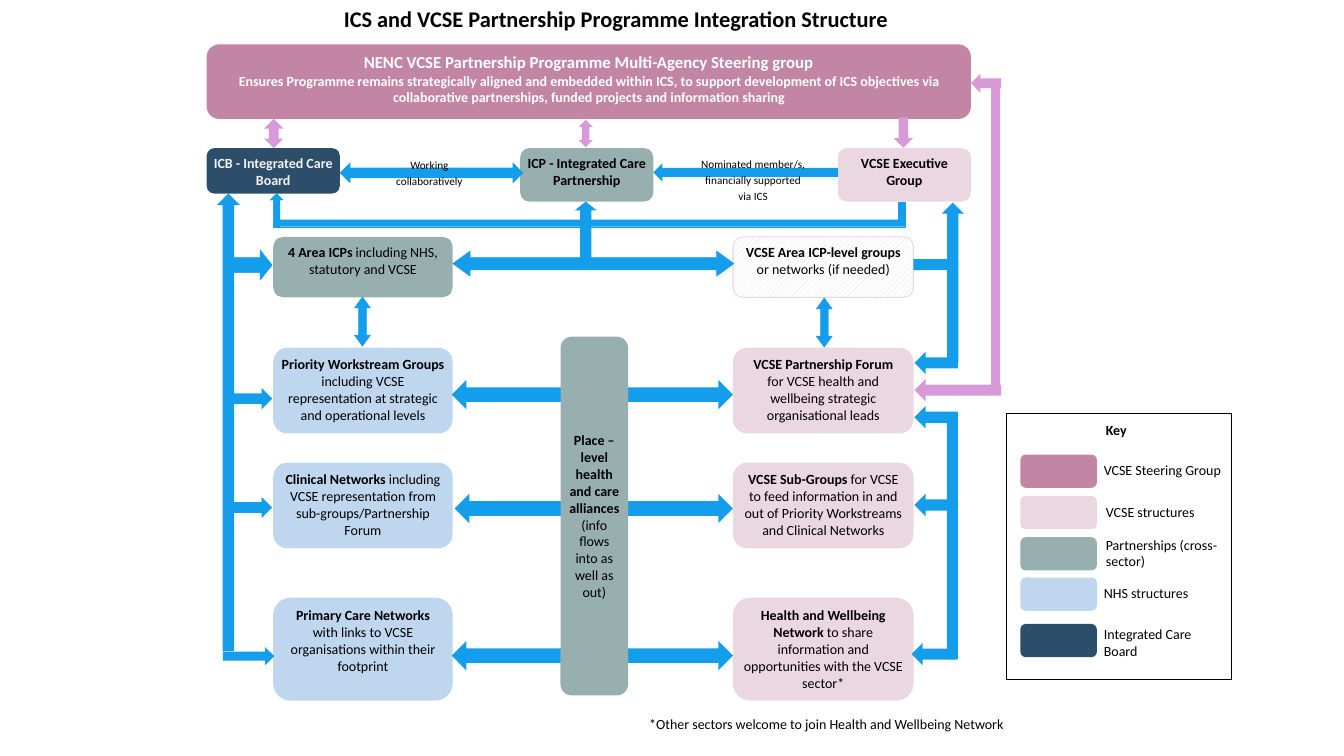
from pptx import Presentation
from pptx.dml.color import RGBColor
from pptx.enum.dml import MSO_PATTERN
from pptx.enum.shapes import MSO_SHAPE
from pptx.enum.text import MSO_ANCHOR, MSO_AUTO_SIZE, PP_ALIGN
from pptx.util import Inches, Pt

RECT, ROUND = MSO_SHAPE.RECTANGLE, MSO_SHAPE.ROUNDED_RECTANGLE
LEFT, RIGHT, UP = MSO_SHAPE.LEFT_ARROW, MSO_SHAPE.RIGHT_ARROW, MSO_SHAPE.UP_ARROW
ACROSS, UPDOWN = MSO_SHAPE.LEFT_RIGHT_ARROW, MSO_SHAPE.UP_DOWN_ARROW
HATCH = MSO_PATTERN.WIDE_UPWARD_DIAGONAL
TOP, MIDDLE = MSO_ANCHOR.TOP, MSO_ANCHOR.MIDDLE
NOFIT, GROW = MSO_AUTO_SIZE.NONE, MSO_AUTO_SIZE.SHAPE_TO_FIT_TEXT
START, CENTRE = PP_ALIGN.LEFT, PP_ALIGN.CENTER
COLORS = {
    "white": "FFFFFF", "black": "000000", "pale": "F3F3F3", "rose": "C285A3",
    "pink": "EBD7E1", "sage": "98AFB0", "sky": "BED7EF", "navy": "2D4E6B",
    "blue": "139DEB", "lilac": "D799D8",
}


def shade(name):
    """Return the named colour."""
    return RGBColor.from_string(COLORS[name])


def shape(slide, kind, box, fill, edge=None, width=0.25):
    """Add a flat preset shape."""
    item = slide.shapes.add_shape(kind, *map(Inches, box))
    item.shadow.inherit = False
    item.fill.solid()
    item.fill.fore_color.rgb = shade(fill)
    if edge:
        item.line.color.rgb = shade(edge)
        item.line.width = Pt(width)
    else:
        item.line.fill.background()
    return item


def frame(item, inset=True, anchor=TOP, fit=NOFIT):
    """Set up the text frame of a shape."""
    body = item.text_frame
    body.word_wrap = True
    body.auto_size = fit
    body.vertical_anchor = anchor
    if inset:
        body.margin_left = body.margin_right = Inches(0.04)
        body.margin_top = body.margin_bottom = Inches(0.04)
    return body


def write(para, text, size=10, bold=False, color="black"):
    """Add one run to a paragraph."""
    run = para.add_run()
    run.text = text
    run.font.name = "Calibri"
    run.font.size = Pt(size)
    run.font.bold = bold
    run.font.color.rgb = shade(color)


def card(slide, box, fill, head, rest="", color="black", anchor=TOP):
    """Add a rounded box with a bold lead and plain text."""
    item = shape(slide, ROUND, box, fill)
    para = frame(item, anchor=anchor).paragraphs[0]
    para.alignment = CENTRE
    write(para, head, bold=True, color=color)
    if rest:
        write(para, rest)
    return item


def note(slide, box, lines, bold=False):
    """Add a plain text box of one or more lines."""
    body = frame(slide.shapes.add_textbox(*map(Inches, box)), False, fit=GROW)
    for i, line in enumerate(lines):
        para = body.add_paragraph() if i else body.paragraphs[0]
        write(para, line, bold=bold)


def title(slide, box):
    """Place the slide title."""
    item = slide.shapes.title
    item.left, item.top, item.width, item.height = map(Inches, box)
    para = frame(item).paragraphs[0]
    para.alignment = START
    write(para, "ICS and VCSE Partnership Programme Integration Structure", 16, True)


def boards(slide, x, y):
    """Draw the steering group and the three boards below it."""
    item = shape(slide, ROUND, (x, y, 7.58, 0.74), "rose")
    body = frame(item)
    lines = (("NENC VCSE Partnership Programme Multi-Agency Steering group", 12),
             ("Ensures Programme remains strategically aligned and embedded within ICS, "
              "to support development of ICS objectives via collaborative partnerships, "
              "funded projects and information sharing", 10))
    for i, (text, size) in enumerate(lines):
        para = body.add_paragraph() if i else body.paragraphs[0]
        para.alignment = CENTRE
        write(para, text, size, True, "white")
    for dx, high, fill, text, color in (
            (0, 0.45, "navy", "ICB - Integrated Care Board", "pale"),
            (3.11, 0.53, "sage", "ICP - Integrated Care Partnership", "black"),
            (6.26, 0.53, "pink", "VCSE Executive Group", "black")):
        card(slide, (x + dx, y + 1.03, 1.32, high), fill, text, color=color)


def groups(slide, x, y):
    """Draw the paired rows of groups."""
    rows = (
        (0, 0.6, "sage", "4 Area ICPs ", "including NHS, statutory and VCSE",
         "VCSE Area ICP-level groups ", "or networks (if needed)"),
        (1.1, 0.85, "sky", "Priority Workstream Groups ",
         "including VCSE representation at strategic and operational levels",
         "VCSE Partnership Forum", "for VCSE health and wellbeing strategic organisational leads"),
        (2.24, 0.85, "sky", "Clinical Networks ",
         "including VCSE representation from sub-groups/Partnership Forum", "VCSE Sub-Groups ",
         "for VCSE to feed information in and out of Priority Workstreams and Clinical Networks"),
        (3.58, 1.02, "sky", "Primary Care Networks ",
         "with links to VCSE organisations within their footprint", "Health and Wellbeing Network ",
         "to share information and opportunities with the VCSE sector*"))
    for i, (dy, high, fill, head, rest, lead, tail) in enumerate(rows):
        card(slide, (x, y + dy, 1.78, high), fill, head, rest)
        box = (x + 4.56, y + dy, 1.79, high)
        if i == 1:
            para = card(slide, box, "pink", lead).text_frame.paragraphs[0]
            para.add_line_break()
            write(para, tail)
            continue
        item = card(slide, box, "pink", lead, tail)
        if i == 0:
            item.fill.patterned()
            item.fill.pattern = HATCH
            item.fill.fore_color.rgb = shade("pink")
            item.fill.back_color.rgb = shade("white")
            item.line.color.rgb = shade("pink")
            item.line.width = Pt(0.75)


def links(slide, x, y):
    """Draw the arrows and bars that join the boxes."""
    plain = {"blue": (
        (ACROSS, 2.43, 5.92, 2.79, 0.29), (ACROSS, 2.46, 4.46, 2.76, 0.29),
        (ACROSS, 2.43, 3.33, 2.79, 0.29), (UP, 0.1, 1.48, 0.23, 4.54),
        (RIGHT, 0.16, 5.98, 0.51, 0.18), (LEFT, 6.99, 5.94, 0.45, 0.22),
        (ACROSS, 1.32, 1.17, 1.82, 0.21), (LEFT, 4.43, 1.18, 1.83, 0.18),
        (UP, 7.29, 1.57, 0.22, 1.59), (LEFT, 7.02, 3.05, 0.43, 0.22),
        (RIGHT, 0.27, 3.41, 0.38, 0.21), (RIGHT, 0.27, 4.49, 0.38, 0.21),
        (RECT, 7.34, 3.66, 0.11, 2.44), (LEFT, 7.02, 3.59, 0.43, 0.22),
        (LEFT, 7.02, 4.46, 0.42, 0.22), (RECT, 7.01, 2.13, 0.42, 0.11),
    ), "lilac": (
        (UPDOWN, 0.57, 0.74, 0.19, 0.29), (UPDOWN, 3.69, 0.75, 0.14, 0.27),
        (LEFT, 7.02, 3.32, 0.86, 0.22), (RECT, 7.78, 0.39, 0.09, 3.08),
        (LEFT, 7.58, 0.29, 0.3, 0.19),
    )}
    for fill, parts in plain.items():
        for kind, dx, dy, wide, high in parts:
            shape(slide, kind, (x + dx, y + dy, wide, high), fill)
    shape(slide, LEFT, (x + 6.76, y + 0.78, 0.3, 0.19), "lilac").rotation = 270
    for kind, dx, dy, wide, high, turn, head in (
            (ACROSS, 2.44, 2.05, 2.79, 0.25, 0, 0.69),
            (ACROSS, 5.88, 2.68, 0.49, 0.16, 90, 0.69),
            (ACROSS, 1.3, 2.67, 0.49, 0.16, 90, 0.69),
            (RIGHT, 0.23, 2.04, 0.42, 0.3, 0, 0.4),
            (RECT, 0.66, 1.74, 6.27, 0.07, 0, None),
            (UP, 0.63, 1.48, 0.13, 0.33, 0, 0.5),
            (RECT, 6.86, 1.57, 0.07, 0.2, 0, None),
            (RIGHT, 3.44, 1.77, 0.64, 0.22, 270, 0.4)):
        edge = None if turn == 270 else "blue"
        item = shape(slide, kind, (x + dx, y + dy, wide, high), "blue", edge)
        item.rotation = turn
        if head:
            item.adjustments[1] = head


def labels(slide, x, y):
    """Write the labels on the arrows between boards."""
    for dx, dy, wide, high, inset, text in (
            (2.97, 0.02, 1.24, 0.57, False,
             "Nominated member/s, financially supported via ICS"),
            (0, 0.04, 0.76, 0.37, True, "Working collaboratively")):
        item = slide.shapes.add_textbox(*map(Inches, (x + dx, y + dy, wide, high)))
        para = frame(item, inset, fit=NOFIT if inset else GROW).paragraphs[0]
        para.alignment = CENTRE
        para.line_spacing = 1.19
        para.space_after = Pt(6)
        write(para, text, 8)


def key(slide, x, y):
    """Draw the colour key."""
    shape(slide, RECT, (x, y, 2.23, 2.64), "white", "black")
    note(slide, (x + 0.89, y + 0.03, 1.6, 0.27), ["Key"], True)
    for dy, fill, dx, gap, wide, high, lines in (
            (0.41, "rose", 0.87, 0.02, 1.6, 0.27, ["VCSE Steering Group"]),
            (0.82, "pink", 0.89, 0.03, 1.6, 0.27, ["VCSE structures"]),
            (1.23, "sage", 0.89, -0.06, 1.6, 0.44, ["Partnerships (cross-sector)"]),
            (1.63, "sky", 0.87, 0.02, 1.6, 0.27, ["NHS structures"]),
            (2.09, "navy", 0.87, -0.03, 1.45, 0.44, ["Integrated Care", "Board"])):
        shape(slide, ROUND, (x + 0.14, y + dy, 0.76, 0.33), fill)
        note(slide, (x + dx, y + dy + gap, wide, high), lines)


def main():
    """Build and save the slide."""
    deck = Presentation()
    deck.slide_width, deck.slide_height = Inches(13.33), Inches(7.5)
    slide = deck.slides.add_slide(deck.slide_layouts[5])
    title(slide, (3.37, 0.01, 6.36, 0.37))
    boards(slide, 2.05, 0.44)
    groups(slide, 2.71, 2.35)
    links(slide, 2.05, 0.44)
    labels(slide, 3.88, 1.47)
    card(slide, (5.56, 3.34, 0.67, 3.56), "sage", "Place – level health and care alliances ",
         "(info flows into as well as out)", anchor=MIDDLE)
    key(slide, 9.98, 4.1)
    note(slide, (6.34, 7.05, 4.02, 0.27),
         ["*Other sectors welcome to join Health and Wellbeing Network"])
    deck.save("out.pptx")


if __name__ == "__main__":
    main()
